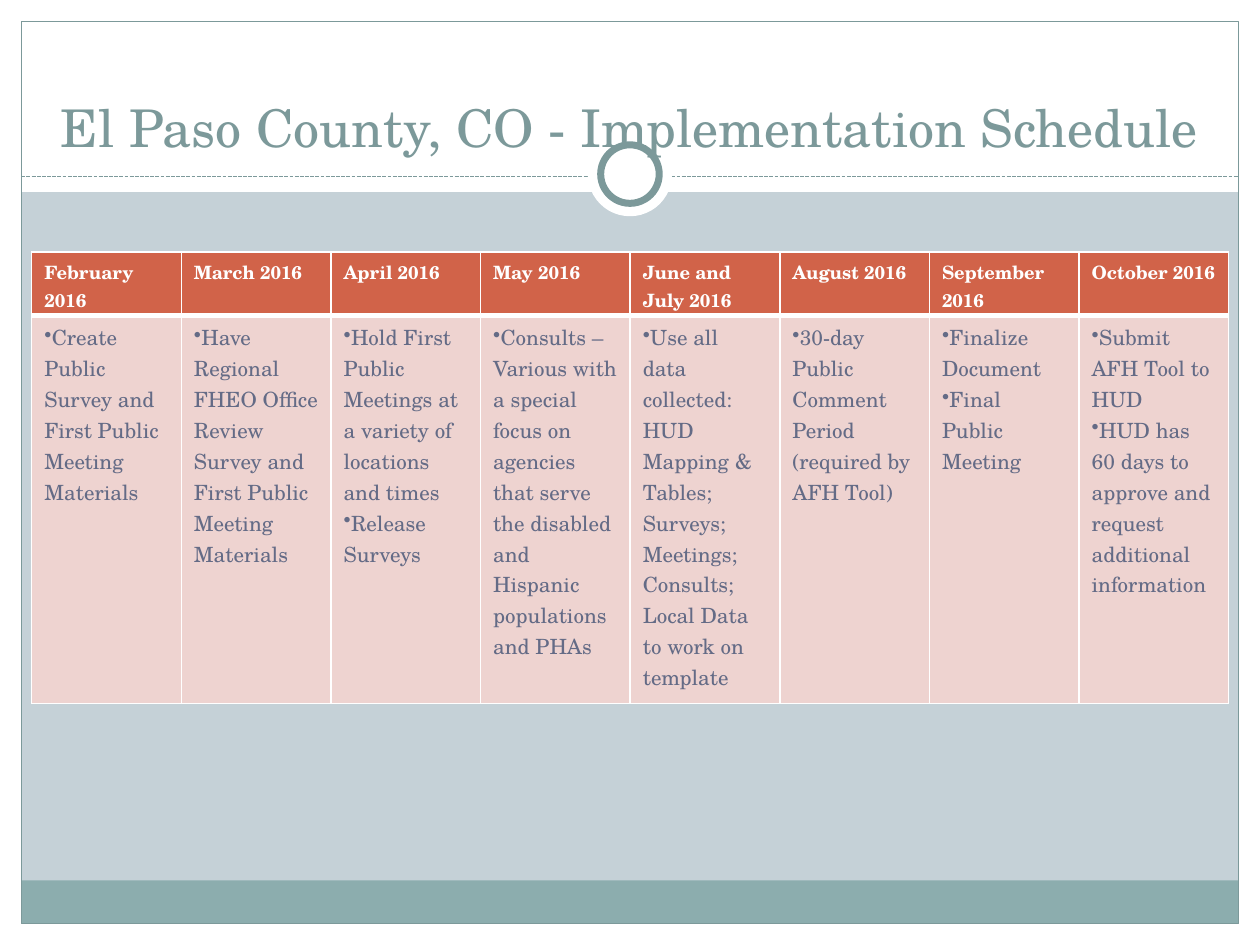
from dataclasses import dataclass

from lxml.etree import SubElement
from pptx import Presentation
from pptx.dml.color import RGBColor as RGB
from pptx.enum.dml import MSO_LINE as Dash
from pptx.enum.shapes import MSO_CONNECTOR as Connector, MSO_SHAPE as Preset
from pptx.enum.text import MSO_ANCHOR as Anchor, PP_ALIGN as Align
from pptx.oxml import parse_xml
from pptx.oxml.ns import nsdecls, qn
from pptx.util import Cm, Pt


@dataclass(frozen=True)
class Theme:
    """Colours, font and type sizes of the slide."""
    font: str = "TeX Gyre Schola"
    background: str = "C5D1D7"
    white: str = "FFFFFF"
    accent: str = "7C999A"
    footer: str = "8CADAE"
    header: str = "D16349"
    body: str = "EED3D0"
    body_text: str = "646B86"
    title_size: float = 29.7
    header_size: float = 10.5
    body_size: float = 12


THEME = Theme()
WIDTH, HEIGHT, MARGIN = 25.4, 19.05, 0.43
RULE_Y = 3.56
TITLE = "El Paso County, CO - Implementation Schedule"
SCHEDULE = {
    "February 2016": ["Create Public Survey and First Public Meeting Materials"],
    "March 2016": ["Have Regional FHEO Office Review Survey and First Public "
                   "Meeting Materials"],
    "April 2016": ["Hold First Public Meetings at a variety of locations and times",
                   "Release Surveys"],
    "May 2016": ["Consults – Various with a special focus on agencies that serve "
                 "the disabled and Hispanic populations and PHAs"],
    "June and July 2016": ["Use all data collected: HUD Mapping & Tables; Surveys; "
                           "Meetings; Consults; Local Data to work on template"],
    "August 2016": ["30-day Public Comment Period (required by AFH Tool)"],
    "September 2016": ["Finalize Document", "Final Public Meeting"],
    "October 2016": ["Submit AFH Tool to HUD",
                     "HUD has 60 days to approve and request additional information"],
}


def add_panel(slide, preset, box, fill=None, line=None, weight=0.75):
    """Add a preset shape with an optional fill and outline."""
    panel = slide.shapes.add_shape(preset, *map(Cm, box))
    panel.shadow.inherit = False
    if fill:
        panel.fill.solid()
        panel.fill.fore_color.rgb = RGB.from_string(fill)
    else:
        panel.fill.background()
    if line:
        panel.line.color.rgb = RGB.from_string(line)
        panel.line.width = Pt(weight)
    else:
        panel.line.fill.background()


def add_circle(slide, diameter, center_y, line=None):
    """Add a white circle centred across the slide."""
    box = ((WIDTH - diameter) / 2, center_y - diameter / 2, diameter, diameter)
    add_panel(slide, Preset.OVAL, box, THEME.white, line, 4)


def add_rule(slide):
    """Add the dashed rule under the title."""
    rule = slide.shapes.add_connector(
        Connector.STRAIGHT, Cm(MARGIN), Cm(RULE_Y), Cm(WIDTH - MARGIN), Cm(RULE_Y))
    rule.line.color.rgb = RGB.from_string(THEME.accent)
    rule.line.width = Pt(0.75)
    rule.line.dash_style = Dash.SQUARE_DOT
    SubElement(rule._element.spPr, qn("a:effectLst"))


def add_frame(slide):
    """Add the margins, footer band, outline, rule and ring."""
    for box, fill in (
        ((0, HEIGHT - MARGIN, WIDTH, MARGIN), THEME.white),
        ((0, 0, WIDTH, 3.87), THEME.white),
        ((0, 0, MARGIN, HEIGHT), THEME.white),
        ((WIDTH - MARGIN, 0, MARGIN, HEIGHT), THEME.white),
        ((MARGIN, 17.75, WIDTH - 2 * MARGIN, 0.87), THEME.footer),
    ):
        add_panel(slide, Preset.RECTANGLE, box, fill)
    outline = (MARGIN, MARGIN, WIDTH - 2 * MARGIN, HEIGHT - 2 * MARGIN)
    add_panel(slide, Preset.RECTANGLE, outline, line=THEME.accent)
    add_rule(slide)
    add_circle(slide, 1.7, 3.51)
    add_circle(slide, 1.18, 3.51, THEME.accent)


def style_font(paragraph, size, color, bold=False):
    """Set the font of a whole paragraph."""
    font = paragraph.font
    font.name, font.size, font.bold = THEME.font, Pt(size), bold
    font.color.rgb = RGB.from_string(color)


def add_title(slide):
    """Add the bottom-anchored, centred title."""
    frame = slide.shapes.add_textbox(Cm(0.85), Cm(0.64), Cm(23.7), Cm(2.54)).text_frame
    frame.word_wrap = True
    frame.vertical_anchor = Anchor.BOTTOM
    frame.margin_bottom = 0
    heading = frame.paragraphs[0]
    heading.text = TITLE
    heading.alignment = Align.CENTER
    style_font(heading, THEME.title_size, THEME.accent)


def style_cell(cell, fill, bottom=1):
    """Fill a cell and draw its white borders."""
    cell.fill.solid()
    cell.fill.fore_color.rgb = RGB.from_string(fill)
    properties = cell._tc.get_or_add_tcPr()
    weights = {"L": 1, "R": 1, "T": 1, "B": bottom}
    for position, (side, weight) in enumerate(weights.items()):
        properties.insert(position, parse_xml(
            f'<a:ln{side} {nsdecls("a")} w="{Pt(weight)}"><a:solidFill>'
            f'<a:srgbClr val="{THEME.white}"/></a:solidFill></a:ln{side}>'))


def add_bullet(paragraph):
    """Put a bullet directly before the paragraph's text."""
    properties = paragraph._p.get_or_add_pPr()
    properties.set("marL", "0")
    properties.set("indent", "0")
    bullet = parse_xml(f'<a:buChar {nsdecls("a")} char="•"/>')
    properties.insert_element_before(bullet, "a:tabLst", "a:defRPr", "a:extLst")


def add_schedule(slide):
    """Add the table with one column for each period."""
    table = slide.shapes.add_table(
        2, len(SCHEDULE), Cm(0.64), Cm(5.08), Cm(24.13), Cm(9.1)).table
    table.rows[0].height, table.rows[1].height = Cm(1.28), Cm(7.82)
    for column, (period, tasks) in enumerate(SCHEDULE.items()):
        header, body = table.cell(0, column), table.cell(1, column)
        header.text = period
        style_font(header.text_frame.paragraphs[0], THEME.header_size, THEME.white, True)
        style_cell(header, THEME.header, bottom=3)
        body.text = "\n".join(tasks)
        for task in body.text_frame.paragraphs:
            style_font(task, THEME.body_size, THEME.body_text)
            add_bullet(task)
        style_cell(body, THEME.body)


def main():
    """Build and save the slide."""
    deck = Presentation()
    deck.slide_width, deck.slide_height = Cm(WIDTH), Cm(HEIGHT)
    slide = deck.slides.add_slide(deck.slide_layouts[6])
    slide.background.fill.solid()
    slide.background.fill.fore_color.rgb = RGB.from_string(THEME.background)
    add_frame(slide)
    add_title(slide)
    add_schedule(slide)
    deck.save("out.pptx")


if __name__ == "__main__":
    main()
